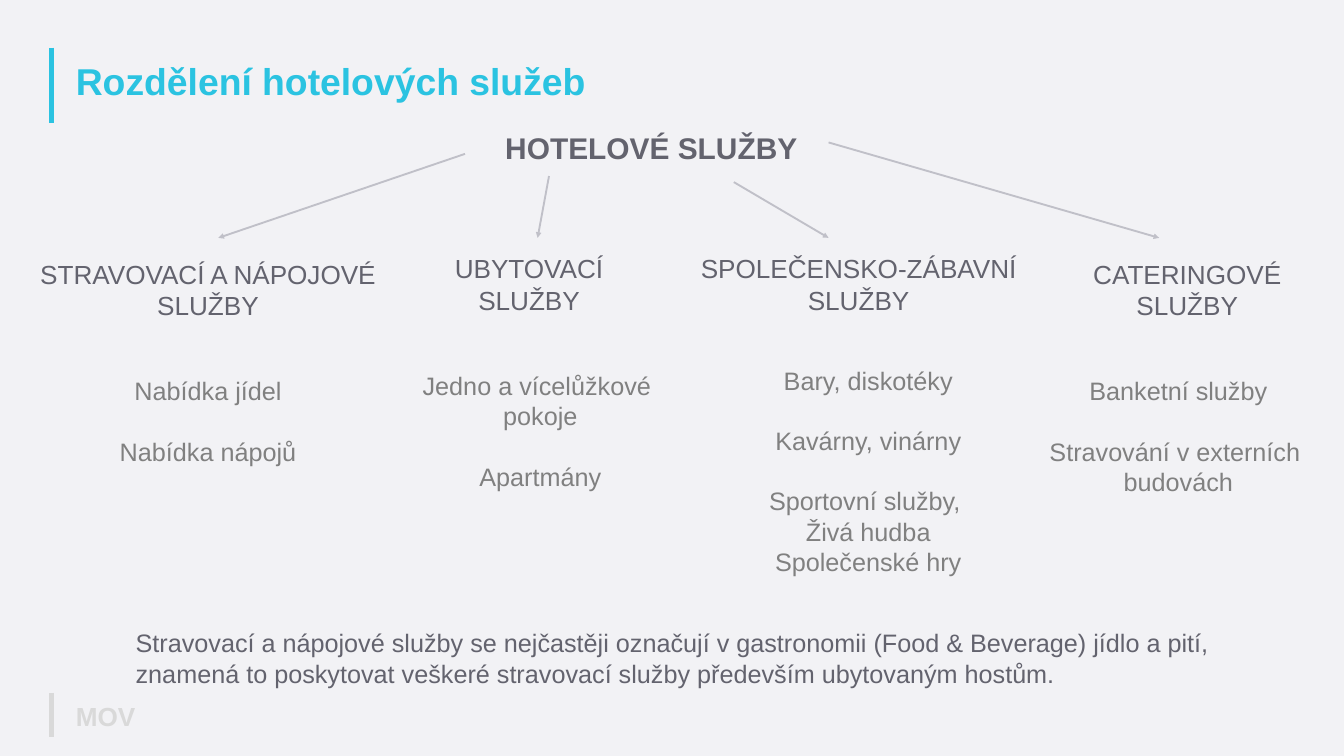
from dataclasses import dataclass

from lxml import etree
from pptx import Presentation
from pptx import util as u
from pptx.dml.color import RGBColor
from pptx.enum import shapes, text
from pptx.oxml import ns


@dataclass(frozen=True)
class Theme:
    font: str = "Arial"
    background: str = "F2F2F5"
    accent: str = "2BC3E1"
    dark: str = "63636E"
    grey: str = "808080"
    arrow: str = "C0C0C8"
    footer: str = "D9D9D9"
    title_size: int = 40
    root_size: int = 32
    heading_size: int = 28
    body_size: int = 27
    line_pitch: float = 1.2
    bar_width: int = 5
    arrow_width: int = 2


THEME = Theme()
LEFT, CENTER = text.PP_ALIGN.LEFT, text.PP_ALIGN.CENTER

# Each branch: heading box, heading lines, item box, groups of item lines, arrow ends
BRANCHES = [
    ((0.5, 3.79, 5.35, 1.04), "STRAVOVACÍ A NÁPOJOVÉ",
     (1.67, 5.54, 2.85, 1.46), [["Nabídka jídel"], ["Nabídka nápojů"]],
     ((6.92, 2.29), (3.25, 3.54))),
    ((6.67, 3.71, 2.54, 1.04), "UBYTOVACÍ",
     (6.17, 5.46, 3.74, 1.92), [["Jedno a vícelůžkové ", "pokoje"], ["Apartmány"]],
     ((8.17, 2.62), (8, 3.54))),
    ((10.33, 3.71, 5.03, 1.04), "SPOLEČENSKO-ZÁBAVNÍ",
     (11.33, 5.38, 3.18, 3.28),
     [["Bary, diskotéky"], ["Kavárny, vinárny"],
      ["Sportovní služby, ", "Živá hudba", "Společenské hry"]],
     ((10.92, 2.71), (12.33, 3.54))),
    ((16.17, 3.79, 3.14, 1.04), "CATERINGOVÉ",
     (15.5, 5.54, 4.07, 1.92),
     [["Banketní služby"], ["Stravování v externích ", "budovách"]],
     ((12.33, 2.12), (17.25, 3.54))),
]

SUMMARY = [
    "Stravovací a nápojové služby se nejčastěji označují v gastronomii "
    "(Food & Beverage) jídlo a pití,",
    "znamená to poskytovat veškeré stravovací služby především ubytovaným hostům.",
]


def add_text(slide, box, groups, size, color, bold=False, align=LEFT,
             first_align=None, pitch=THEME.line_pitch):
    """Add groups of lines, with the height of one line between groups."""
    shape = slide.shapes.add_textbox(*(u.Inches(value) for value in box))
    frame = shape.text_frame
    frame.word_wrap = False
    frame.auto_size = text.MSO_AUTO_SIZE.SHAPE_TO_FIT_TEXT
    frame.text = "\n".join(line for group in groups for line in group)
    starts, count = set(), 0
    for group in groups:
        starts.add(count)
        count += len(group)
    for index, paragraph in enumerate(frame.paragraphs):
        paragraph.alignment = align
        paragraph.line_spacing = u.Pt(size * pitch)
        if index and index in starts:
            paragraph.space_before = u.Pt(size * pitch)
        for run in paragraph.runs:
            run.font.name = THEME.font
            run.font.size = u.Pt(size)
            run.font.bold = bold
            run.font.color.rgb = RGBColor.from_string(color)
    if first_align is not None:
        frame.paragraphs[0].alignment = first_align


def add_line(slide, start, end, color, width, arrowhead=False):
    connector = slide.shapes.add_connector(
        shapes.MSO_CONNECTOR.STRAIGHT, *(u.Inches(value) for value in start + end))
    connector.line.color.rgb = RGBColor.from_string(color)
    connector.line.width = u.Pt(width)
    if arrowhead:
        etree.SubElement(connector.line._get_or_add_ln(), ns.qn("a:tailEnd"),
                         type="triangle")
    etree.SubElement(connector._element.spPr, ns.qn("a:effectLst"))


def add_bar(slide, top, bottom, color):
    add_line(slide, (0.77, top), (0.77, bottom), color, THEME.bar_width)


def add_branch(slide, heading_box, heading, item_box, items, arrow):
    add_text(slide, heading_box, [[heading, "SLUŽBY"]], THEME.heading_size,
             THEME.dark, align=CENTER, first_align=LEFT)
    add_text(slide, item_box, items, THEME.body_size, THEME.grey, align=CENTER)
    add_line(slide, *arrow, THEME.arrow, THEME.arrow_width, arrowhead=True)


def main():
    presentation = Presentation()
    presentation.slide_width = u.Inches(20)
    presentation.slide_height = u.Inches(11.25)
    slide = presentation.slides.add_slide(presentation.slide_layouts[6])
    fill = slide.background.fill
    fill.solid()
    fill.fore_color.rgb = RGBColor.from_string(THEME.background)

    add_bar(slide, 0.71, 1.83, THEME.accent)
    add_bar(slide, 10.31, 10.96, THEME.footer)
    add_text(slide, (1.03, 10.38, 1.1, 0.57), [["MOV"]], THEME.heading_size,
             THEME.footer, bold=True)
    add_text(slide, (1.03, 0.88, 18.05, 0.71), [["Rozdělení hotelových služeb"]],
             THEME.title_size, THEME.accent, bold=True, pitch=0.9 * THEME.line_pitch)
    add_text(slide, (7.42, 1.88, 4.59, 0.64), [["HOTELOVÉ SLUŽBY"]],
             THEME.root_size, THEME.dark, bold=True)
    for branch in BRANCHES:
        add_branch(slide, *branch)
    add_text(slide, (1.92, 9.29, 16.42, 1.01), [SUMMARY], THEME.body_size, THEME.dark)
    presentation.save("out.pptx")


if __name__ == "__main__":
    main()
